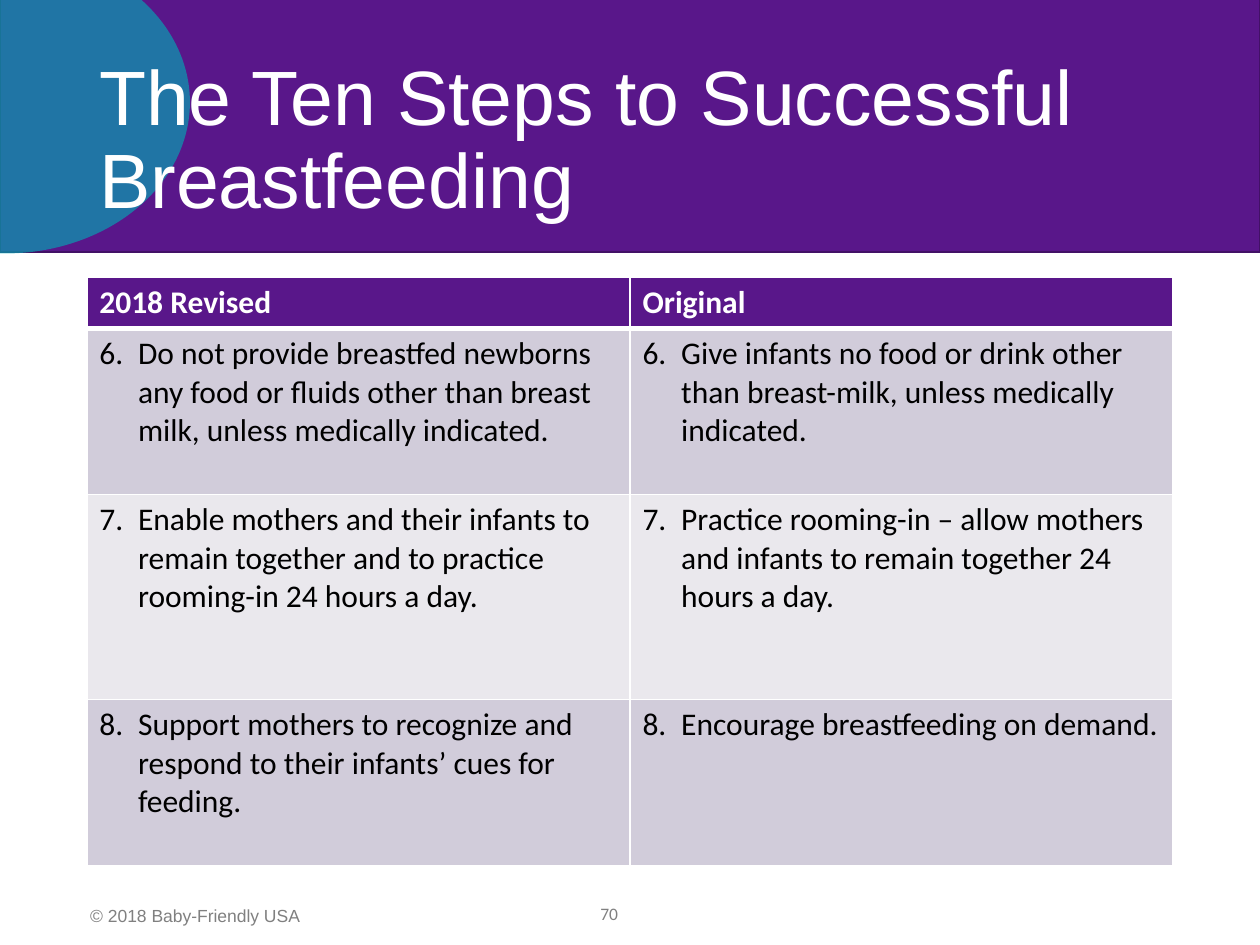
from lxml import etree
from pptx import Presentation, util as u
from pptx.dml.color import RGBColor
from pptx.enum import shapes, text
from pptx.oxml.ns import qn

PURPLE, WHITE, GREY = "59178A", "FFFFFF", "808080"
BANDS = ["D1CCDA", "EAE8ED"]
HEADS = ["2018 Revised", "Original"]
STEPS = [
    ("6.\tDo not provide breastfed newborns any food or fluids other than "
     "breast milk, unless medically indicated.",
     "6.\tGive infants no food or drink other than breast-milk, "
     "unless medically indicated."),
    ("7.\tEnable mothers and their infants to remain together and to "
     "practice rooming-in 24 hours a day.",
     "7.\tPractice rooming-in – allow mothers and infants to remain "
     "together 24 hours a day."),
    ("8.\tSupport mothers to recognize and respond to their infants’ cues "
     "for feeding.",
     "8.\tEncourage breastfeeding on demand."),
]
HEIGHTS = [1.03, 3.35, 4.13, 3.35]
INDENT = u.Cm(0.78)


def color(code):
    return RGBColor.from_string(code)


def style(para, size, face, code, bold=False):
    for run in para.runs:
        font = run.font
        font.size, font.name, font.bold = u.Pt(size), face, bold
        font.color.rgb = color(code)


def add_form(slide, kind, box, fill, line=None, alpha=None):
    form = slide.shapes.add_shape(kind, *map(u.Cm, box))
    form.shadow.inherit = False
    form.fill.solid()
    form.fill.fore_color.rgb = color(fill)
    if line:
        form.line.color.rgb = color(line)
        form.line.width = u.Pt(1)
    else:
        form.line.fill.background()
    if alpha:
        tone = form.fill._xPr.find(".//" + qn("a:srgbClr"))
        etree.SubElement(tone, qn("a:alpha"), val=str(alpha * 1000))


def add_text(slide, box, words, size, face, code,
             anchor=text.MSO_ANCHOR.MIDDLE, align=text.PP_ALIGN.LEFT, space=1.0):
    frame = slide.shapes.add_textbox(*map(u.Cm, box)).text_frame
    frame.word_wrap = True
    frame.vertical_anchor = anchor
    frame.text = words
    para = frame.paragraphs[0]
    para.alignment = align
    para.line_spacing = space
    style(para, size, face, code)


def set_edge(cell, side, width):
    line = etree.SubElement(cell._tc.get_or_add_tcPr(), qn("a:ln" + side),
                            w=str(u.Pt(width)))
    fill = etree.SubElement(line, qn("a:solidFill"))
    etree.SubElement(fill, qn("a:srgbClr"), val=WHITE)


def fill_cell(cell, words, row):
    head = row == 0
    thick = {"T": 3 if row == 1 else 1, "B": 3 if head else 1}
    for side in "LRTB":
        set_edge(cell, side, thick.get(side, 1))
    cell.fill.solid()
    cell.fill.fore_color.rgb = color(PURPLE if head else BANDS[(row - 1) % 2])
    cell.text = words
    para = cell.text_frame.paragraphs[0]
    if not head:
        props = para._p.get_or_add_pPr()
        props.set("marL", str(INDENT))
        props.set("indent", str(-INDENT))
    style(para, 18, "Calibri", WHITE if head else "000000", head)


def add_grid(slide, left, top, width):
    rows = [HEADS, *STEPS]
    grid = slide.shapes.add_table(len(rows), len(HEADS), u.Cm(left), u.Cm(top),
                                  u.Cm(width), u.Cm(sum(HEIGHTS))).table
    for row, (tall, cells) in enumerate(zip(HEIGHTS, rows)):
        grid.rows[row].height = u.Cm(tall)
        for col, words in enumerate(cells):
            fill_cell(grid.cell(row, col), words, row)


def main():
    deck = Presentation()
    deck.slide_width, deck.slide_height = u.Cm(25.4), u.Cm(19.05)
    slide = deck.slides.add_slide(deck.slide_layouts[6])
    kinds = shapes.MSO_SHAPE
    add_form(slide, kinds.RECTANGLE, (0, -0.1, 25.4, 5.18), PURPLE, line="421166")
    add_form(slide, kinds.OVAL, (-3.61, -0.99, 7.44, 6.1), "00ADB5", alpha=63)
    add_text(slide, (1.57, 18.11, 5.33, 0.69), "© 2018 Baby-Friendly USA",
             10, "Arial", GREY, anchor=text.MSO_ANCHOR.TOP)
    add_text(slide, (9.42, 17.91, 5.72, 1.02), "70", 10, "Calibri", GREY,
             align=text.PP_ALIGN.CENTER)
    add_text(slide, (1.75, 1.02, 21.9, 3.68),
             "The Ten Steps to Successful Breastfeeding", 44, "Arial", WHITE,
             space=0.9)
    add_grid(slide, 1.75, 5.59, 21.9)
    deck.save("out.pptx")


if __name__ == "__main__":
    main()
